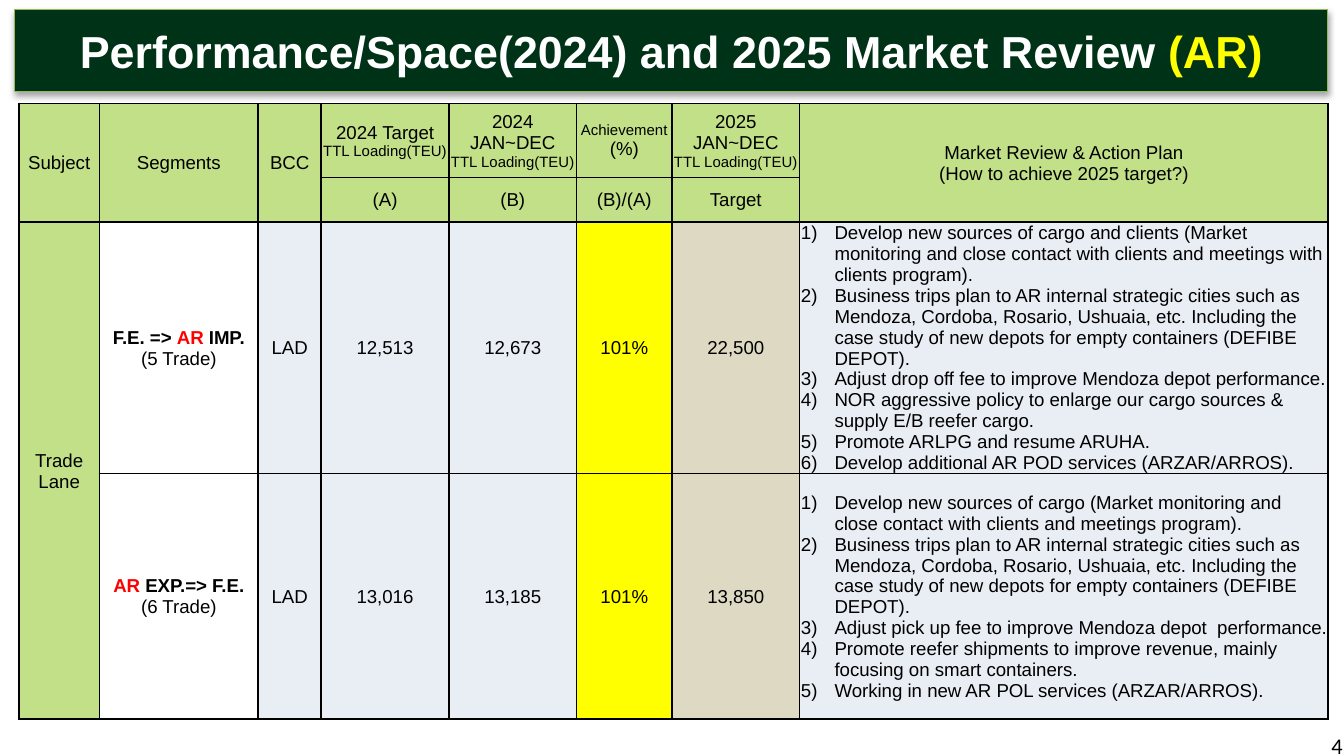
"""Build the 2024 performance and 2025 market review slide for AR."""
from dataclasses import dataclass

from lxml import etree
from pptx import Presentation
from pptx.dml.color import RGBColor
from pptx.enum.text import MSO_ANCHOR, MSO_AUTO_SIZE, PP_ALIGN
from pptx.oxml import parse_xml
from pptx.oxml.ns import nsdecls, qn
from pptx.util import Inches, Pt

MIDDLE = MSO_ANCHOR.MIDDLE
FIXED = MSO_AUTO_SIZE.NONE
LEFT, CENTER, RIGHT = PP_ALIGN.LEFT, PP_ALIGN.CENTER, PP_ALIGN.RIGHT

COLORS = {
    "black": "000000", "white": "FFFFFF", "red": "FF0000", "yellow": "FFFF00",
    "dark": "003217", "edge": "98B955", "green": "C2E088", "pale": "E9EDF4",
    "tan": "DDD9C3",
}
WIDTHS = [0.6, 1.18, 0.47, 0.95, 0.95, 0.71, 0.95, 3.93]
HEIGHTS = [0.55, 0.33, 1.78, 1.83]
LOAD = "TTL Loading(TEU)"
TRIPS = ("Business trips plan to AR internal strategic cities such as Mendoza, "
         "Cordoba, Rosario, Ushuaia, etc. Including the case study of new depots "
         "for empty containers (DEFIBE DEPOT).")


@dataclass
class Run:
    text: str
    size: int = 10
    color: str = "black"
    bold: bool = False
    font: str = "Arial"


@dataclass
class Lane:
    name: list[Run]
    trade: str
    target: str
    actual: str
    goal: str
    plans: list[str]
    after: int = 0


HEADS = [
    (3, [Run("2024 Target")], [Run(LOAD, 8)], "(A)"),
    (4, [Run("2024 JAN~DEC")], [Run(LOAD, 8)], "(B)"),
    (5, [Run("Achievement", 8)], [Run("(%)")], "(B)/(A)"),
    (6, [Run("2025 JAN~DEC")], [Run(LOAD, 8)], "Target"),
]
TALL = [
    (0, ["Subject"]), (1, ["Segments"]), (2, ["BCC"]),
    (7, ["Market Review & Action Plan", "(How to achieve 2025 target?)"]),
]
LANES = [
    Lane([Run("F.E. => ", bold=True), Run("AR", color="red", bold=True),
          Run(" IMP.", bold=True)],
         "(5 Trade)", "12,513", "12,673", "22,500", [
        "Develop new sources of cargo and clients (Market monitoring and close "
        "contact with clients and meetings with clients program).",
        TRIPS,
        "Adjust drop off fee to improve Mendoza depot performance.",
        "NOR aggressive policy to enlarge our cargo sources & supply E/B reefer cargo.",
        "Promote ARLPG and resume ARUHA.",
        "Develop additional AR POD services (ARZAR/ARROS).",
    ]),
    Lane([Run("AR", color="red", bold=True), Run(" EXP.=> F.E.", bold=True)],
         "(6 Trade)", "13,016", "13,185", "13,850", [
        "Develop new sources of cargo (Market monitoring and close contact with "
        "clients and meetings program).",
        TRIPS,
        "Adjust pick up fee to improve Mendoza depot  performance.",
        "Promote reefer shipments to improve revenue, mainly focusing on smart "
        "containers.",
        "Working in new AR POL services (ARZAR/ARROS).",
    ], after=12),
]


def rgb(name: str) -> RGBColor:
    return RGBColor.from_string(COLORS[name])


def write(frame, lines: list[list[Run]], align=CENTER, listed: bool = False,
          after: int = 0) -> None:
    for i, line in enumerate(lines):
        para = frame.paragraphs[0] if i == 0 else frame.add_paragraph()
        para.alignment = align
        if listed:
            props = para._p.get_or_add_pPr()
            props.set("marL", str(Inches(0.25)))
            props.set("indent", str(-Inches(0.25)))
            etree.SubElement(props, qn("a:buAutoNum"), type="arabicParenR")
        for part in line:
            run = para.add_run()
            run.text = part.text
            font = run.font
            font.name, font.size, font.bold = part.font, Pt(part.size), part.bold
            font.color.rgb = rgb(part.color)
    if after:
        frame.paragraphs[-1].space_after = Pt(after)


def fill_cell(cell, lines: list[list[Run]], fill: str = "", **form) -> None:
    cell.vertical_anchor = MIDDLE
    cell.margin_left = cell.margin_right = cell.margin_top = Inches(0.01)
    cell.margin_bottom = 0
    if fill:
        cell.fill.solid()
        cell.fill.fore_color.rgb = rgb(fill)
    else:
        cell.fill.background()
    write(cell.text_frame, lines, **form)


def add_edges(cell) -> None:
    props = cell._tc.get_or_add_tcPr()
    for i, side in enumerate("LRTB"):
        props.insert(i, parse_xml(
            f'<a:ln{side} {nsdecls("a")} w="{Pt(1)}"><a:solidFill>'
            f'<a:srgbClr val="{COLORS["black"]}"/></a:solidFill></a:ln{side}>'))


def add_title(slide) -> None:
    title = slide.shapes.title
    title.left, title.top = Inches(0.11), Inches(0.07)
    title.width, title.height = Inches(9.77), Inches(0.61)
    title.fill.solid()
    title.fill.fore_color.rgb = rgb("dark")
    title.line.color.rgb = rgb("edge")
    title.line.width = Pt(0.75)
    title._element.spPr.append(parse_xml(
        f'<a:effectLst {nsdecls("a")}><a:outerShdw blurRad="{Pt(3.1)}" '
        f'dist="{Pt(1.8)}" dir="5400000" rotWithShape="0">'
        f'<a:srgbClr val="{COLORS["black"]}"><a:alpha val="35000"/></a:srgbClr>'
        '</a:outerShdw></a:effectLst>'))
    frame = title.text_frame
    frame.auto_size, frame.word_wrap = FIXED, True
    frame.vertical_anchor = MIDDLE
    write(frame, [[
        Run("Performance/Space(2024) and 2025 Market Review ", 24, "white", True),
        Run("(AR)", 24, "yellow", True)]])


def add_grid(slide) -> None:
    table = slide.shapes.add_table(
        len(HEIGHTS), len(WIDTHS), Inches(0.14), Inches(0.77),
        Inches(sum(WIDTHS)), Inches(sum(HEIGHTS))).table
    table.first_row = table.horz_banding = False
    for col, width in zip(table.columns, WIDTHS):
        col.width = Inches(width)
    for row, height in zip(table.rows, HEIGHTS):
        row.height = Inches(height)
    for col, lines in TALL:
        table.cell(0, col).merge(table.cell(1, col))
        fill_cell(table.cell(0, col), [[Run(line)] for line in lines], "green")
    for col, first, second, label in HEADS:
        fill_cell(table.cell(0, col), [first, second], "green")
        fill_cell(table.cell(1, col), [[Run(label)]], "green")
    table.cell(2, 0).merge(table.cell(3, 0))
    fill_cell(table.cell(2, 0), [[Run("Trade Lane")]], "green")
    for row, lane in enumerate(LANES, 2):
        fill_cell(table.cell(row, 1), [lane.name, [Run(lane.trade)]])
        stats = [("LAD", "pale"), (lane.target, "pale"), (lane.actual, "pale"),
                 ("101%", "yellow"), (lane.goal, "tan")]
        for col, (text, fill) in enumerate(stats, 2):
            fill_cell(table.cell(row, col), [[Run(text)]], fill)
        fill_cell(table.cell(row, 7), [[Run(plan)] for plan in lane.plans],
                  "pale", align=LEFT, listed=True, after=lane.after)
    for cell in table.iter_cells():
        add_edges(cell)


def add_page(slide) -> None:
    box = slide.shapes.add_textbox(
        Inches(7.76), Inches(5.4), Inches(2.33), Inches(0.3))
    box.text_frame.word_wrap = True
    write(box.text_frame, [[Run("4", 12, font="Calibri")]], align=RIGHT)


def main() -> None:
    deck = Presentation()
    deck.slide_width = Inches(10)
    deck.slide_height = deck.slide_width * 9 // 16
    slide = deck.slides.add_slide(deck.slide_layouts[5])
    add_title(slide)
    add_grid(slide)
    add_page(slide)
    deck.save("out.pptx")


if __name__ == "__main__":
    main()
